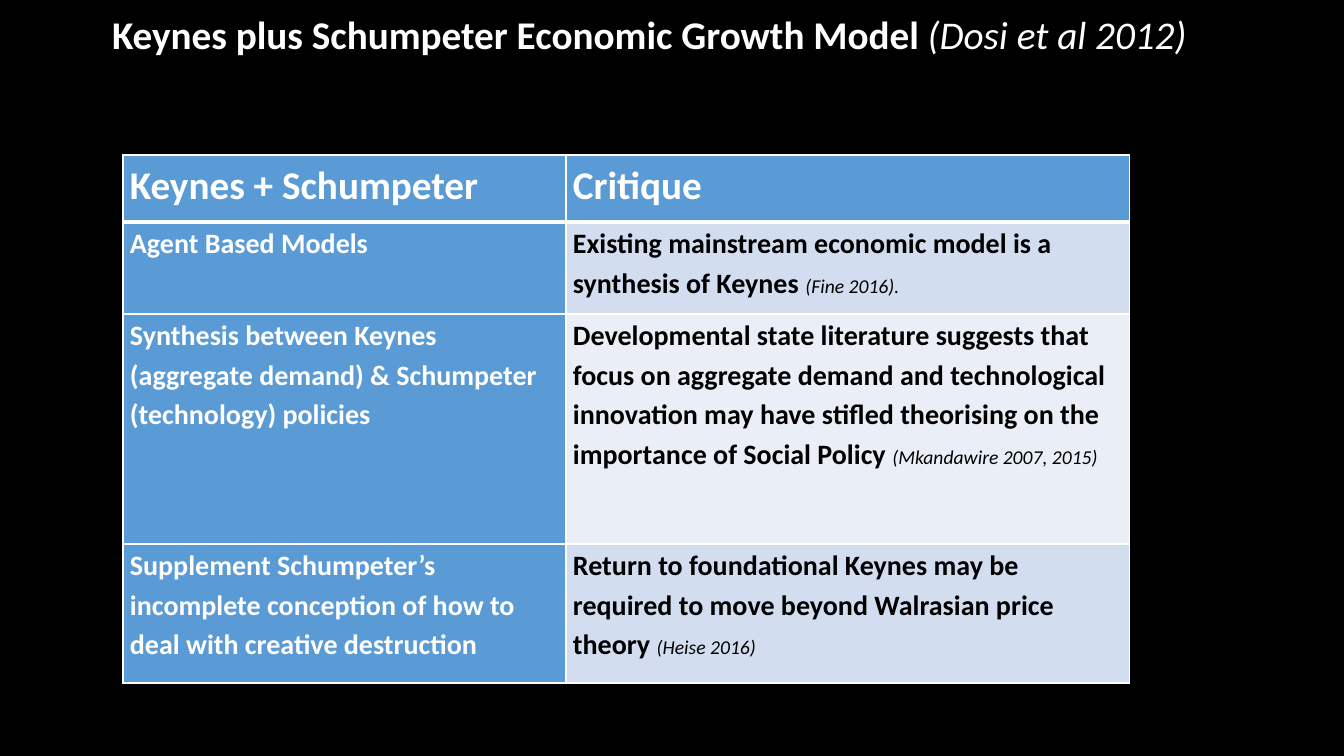
"""Build the slide on the Keynes plus Schumpeter growth model and its critique."""
import pptx
import pptx.dml.color
import pptx.enum.text
import pptx.oxml
import pptx.oxml.ns
import pptx.util

PX = 914400 / 100.8
WHITE, BLACK, BLUE = "FFFFFF", "000000", "5B9BD5"
BANDS = ["D2DEEF", "EAEFF7"]


def color(value):
    """Turn a hex string into a colour."""
    return pptx.dml.color.RGBColor.from_string(value)


def add_span(para, text, size, ink, bold=True):
    """Add a run, bold for statements and italic for citations."""
    span = para.add_run()
    span.text = text
    span.font.name = "Calibri"
    span.font.size = pptx.util.Pt(size)
    span.font.bold = bold
    span.font.italic = not bold
    span.font.color.rgb = color(ink)


deck = pptx.Presentation()
deck.slide_width, deck.slide_height = round(1344 * PX), round(756 * PX)
page = deck.slides.add_slide(deck.slide_layouts[5])
page.background.fill.solid()
page.background.fill.fore_color.rgb = color(BLACK)

title = page.shapes.title
title.left, title.top, title.width, title.height = [round(n * PX) for n in (102, -36, 1159, 146)]
title.text_frame.word_wrap = True
title.text_frame.auto_size = pptx.enum.text.MSO_AUTO_SIZE.NONE
title.text_frame.vertical_anchor = pptx.enum.text.MSO_ANCHOR.MIDDLE
heading = title.text_frame.paragraphs[0]
heading.alignment = pptx.enum.text.PP_ALIGN.LEFT
heading.line_spacing = 0.9
add_span(heading, "Keynes plus Schumpeter Economic Growth Model ", 28, WHITE)
add_span(heading, "(Dosi et al 2012)", 28, WHITE, bold=False)

rows = [
    ("Keynes + Schumpeter", "Critique", ""),
    ("Agent Based Models",
     "Existing mainstream economic model is a synthesis of Keynes ",
     "(Fine 2016)."),
    ("Synthesis between Keynes (aggregate demand) & Schumpeter (technology) policies",
     "Developmental state literature suggests that focus on aggregate demand and "
     "technological innovation may have stifled theorising on the importance of Social Policy ",
     "(Mkandawire 2007, 2015)"),
    ("Supplement Schumpeter’s incomplete conception of how to deal with creative destruction",
     "Return to foundational Keynes may be required to move beyond Walrasian price theory ",
     "(Heise 2016)"),
]
column_widths = [443, 564]
row_heights = [67, 92, 230, 139]
frame = page.shapes.add_table(
    len(rows), 2, round(123 * PX), round(155 * PX),
    round(sum(column_widths) * PX), round(sum(row_heights) * PX))
table = frame.table
table.first_row = table.horz_banding = False
for column, width in zip(table.columns, column_widths):
    column.width = round(width * PX)

for index, (model, critique, citation) in enumerate(rows):
    table.rows[index].height = round(row_heights[index] * PX)
    header = index == 0
    size = 28 if header else 20
    for side, text in enumerate((model, critique)):
        cell = table.cell(index, side)
        cell.margin_left = cell.margin_right = round(7 * PX)
        cell.margin_top = cell.margin_bottom = 0
        para = cell.text_frame.paragraphs[0]
        para.line_spacing = 1.15
        para.space_after = pptx.util.Pt(10)
        banded = side == 1 and not header
        add_span(para, text, size, BLACK if banded else WHITE)
        if banded:
            add_span(para, citation, 14, BLACK, bold=False)

        properties = cell._tc.get_or_add_tcPr()
        for edge in "LRTB":
            thick = (index, edge) in [(0, "B"), (1, "T")]
            properties.append(pptx.oxml.parse_xml(
                f'<a:ln{edge} {pptx.oxml.ns.nsdecls("a")} w="{pptx.util.Pt(3 if thick else 1)}">'
                f'<a:solidFill><a:srgbClr val="{WHITE}"/></a:solidFill></a:ln{edge}>'))
        cell.fill.solid()
        cell.fill.fore_color.rgb = color(BANDS[(index - 1) % 2] if banded else BLUE)

deck.save("out.pptx")
